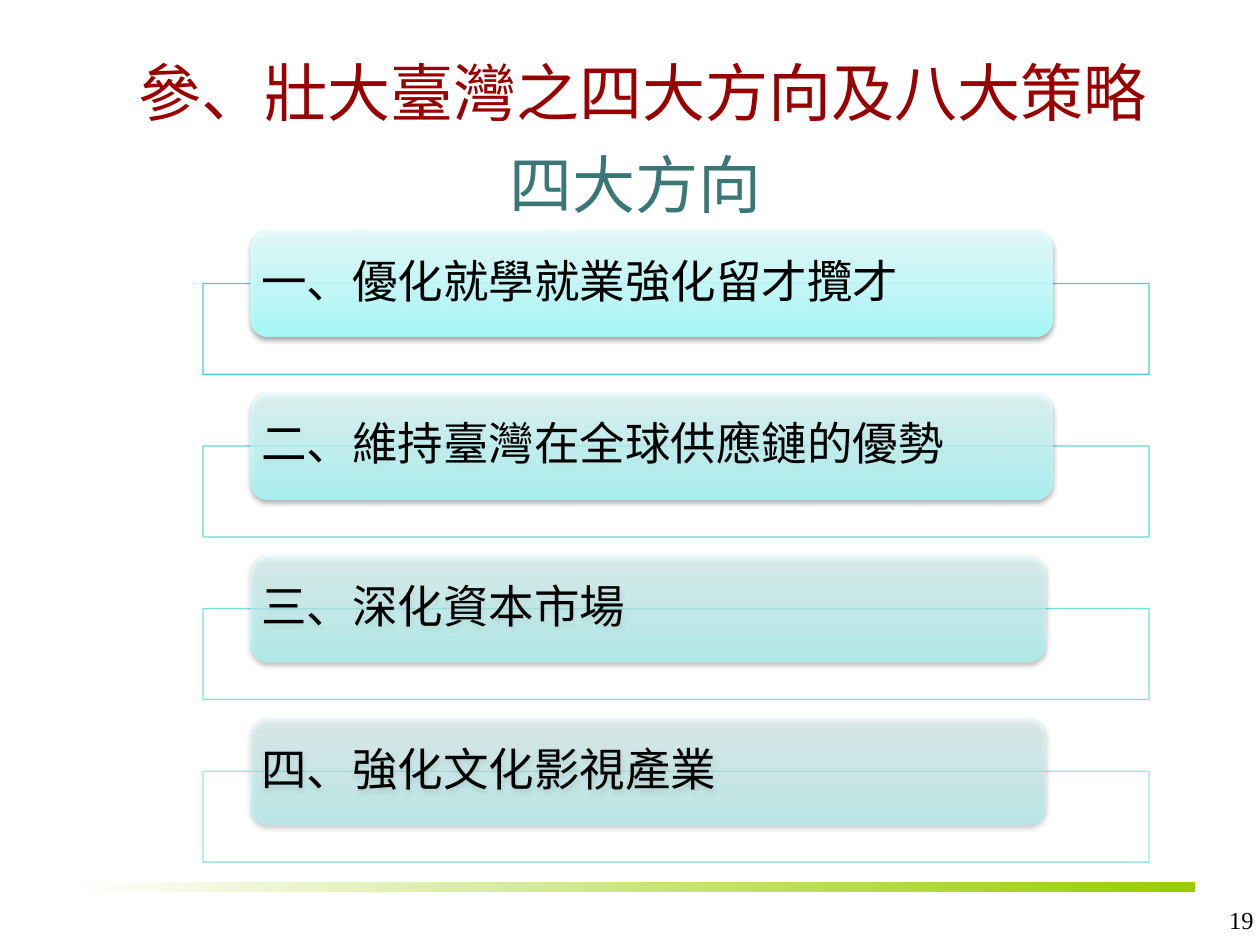
from lxml import etree
from pptx import Presentation
from pptx.dml.color import RGBColor
from pptx.enum import shapes, text
from pptx.oxml import parse_xml
from pptx.oxml.ns import nsdecls, qn
from pptx.util import Pt

CJK, SERIF = "Noto Sans CJK SC", "Times New Roman"
RED = RGBColor(0x99, 0x00, 0x00)
TEAL = RGBColor(0x3C, 0x77, 0x77)
BLACK = RGBColor(0, 0, 0)
WHITE = RGBColor(0xFF, 0xFF, 0xFF)
TURQUOISE = RGBColor(0x33, 0xCC, 0xCC)
GREEN = RGBColor(0x99, 0xCC, 0x00)
PALE_STOPS = [(0, RGBColor(0xA5, 0xFF, 0xFF)), (35, RGBColor(0xBF, 0xFF, 0xFF)),
              (100, RGBColor(0xE7, 0xFF, 0xFF))]
DIRECTIONS = [("一、優化就學就業強化留才攬才", 458, 90),
              ("二、維持臺灣在全球供應鏈的優勢", 458, 77),
              ("三、深化資本市場", 454, 63),
              ("四、強化文化影視產業", 454, 50)]


def put_text(sp, words, size, color, font=CJK, inset=3.6, align=text.PP_ALIGN.LEFT,
             anchor=text.MSO_ANCHOR.TOP, spacing=1.0, wrap=True):
    """Write one formatted paragraph into a shape."""
    tf = sp.text_frame
    frame = {"word_wrap": wrap, "vertical_anchor": anchor, "auto_size": text.MSO_AUTO_SIZE.NONE}
    frame.update({f"margin_{side}": Pt(inset) for side in ("left", "right", "top", "bottom")})
    for name, value in frame.items():
        setattr(tf, name, value)
    p = tf.paragraphs[0]
    p.alignment, p.line_spacing = align, spacing
    r = p.add_run()
    r.text = words
    for name, value in {"size": Pt(size), "name": font, "bold": False}.items():
        setattr(r.font, name, value)
    r.font.color.rgb = color
    etree.SubElement(r.font._element, qn("a:ea")).set("typeface", font)
    return p


def add_box(s, kind, x, y, w, h):
    """Add a preset shape without line or shadow."""
    sp = s.shapes.add_shape(kind, Pt(x), Pt(y), Pt(w), Pt(h))
    sp.shadow.inherit = False
    sp.line.fill.background()
    return sp


def set_alpha(fill, percent):
    """Set the opacity of a solid fill."""
    color = fill._xPr.find(qn("a:solidFill"))[0]
    etree.SubElement(color, qn("a:alpha")).set("val", str(percent * 1000))


def set_gradient(sp, stops, angle, alpha=100):
    """Give a shape a linear gradient, with the angle in clockwise degrees."""
    stop_xml = "".join(
        f'<a:gs pos="{pos * 1000}"><a:srgbClr val="{color}">'
        f'<a:alpha val="{alpha * 1000}"/></a:srgbClr></a:gs>' for pos, color in stops)
    grad = parse_xml(f'<a:gradFill {nsdecls("a")} rotWithShape="1"><a:gsLst>{stop_xml}</a:gsLst>'
                     f'<a:lin ang="{angle * 60000}" scaled="0"/></a:gradFill>')
    sp._element.spPr.find(qn("a:prstGeom")).addnext(grad)


def set_shadow(sp):
    """Give a shape a soft shadow below it."""
    effects = sp._element.spPr.find(qn("a:effectLst"))
    effects.append(parse_xml(
        f'<a:outerShdw {nsdecls("a")} blurRad="{Pt(3)}" dist="{Pt(1.6)}" dir="5400000" '
        f'rotWithShape="0"><a:srgbClr val="{BLACK}"><a:alpha val="38000"/></a:srgbClr>'
        '</a:outerShdw>'))


def add_heading(s, x, y, w):
    """Place the title and the subtitle under it."""
    title = s.shapes.title
    for name, value in {"left": x, "top": y, "width": w, "height": 70}.items():
        setattr(title, name, Pt(value))
    middle = {"align": text.PP_ALIGN.CENTER, "anchor": text.MSO_ANCHOR.MIDDLE}
    p = put_text(title, "參、壯大臺灣之四大方向及八大策略", 36, RED, **middle)
    p._p.get_or_add_pPr().set("indent", str(Pt(14.4)))
    subtitle = s.shapes.add_textbox(Pt(x + 193), Pt(y + 65.6), Pt(340), Pt(44))
    put_text(subtitle, "四大方向", 36, TEAL, **middle)


def add_direction(s, x, y, w, words, label_w, alpha):
    """Place one outlined frame with its rounded label on top."""
    frame = add_box(s, shapes.MSO_SHAPE.RECTANGLE, x, y + 30.2, w, 52)
    frame.fill.solid()
    frame.fill.fore_color.rgb = WHITE
    set_alpha(frame.fill, 90)
    frame.line.color.rgb = TURQUOISE
    frame.line.width = Pt(0.75)
    set_alpha(frame.line.fill, alpha)
    label = add_box(s, shapes.MSO_SHAPE.ROUNDED_RECTANGLE, x + 27.3, y, label_w, 60.5)
    set_gradient(label, PALE_STOPS, 270, alpha)
    set_shadow(label)
    put_text(label, words, 26, BLACK, inset=3, anchor=text.MSO_ANCHOR.MIDDLE, spacing=0.9)


def add_directions(s, x, y, w, pitch):
    """Stack the four directions at an equal pitch."""
    for i, direction in enumerate(DIRECTIONS):
        add_direction(s, x, y + i * pitch, w, *direction)


def add_footer(s, x, y, w):
    """Place the fading rule and the slide number."""
    rule = add_box(s, shapes.MSO_SHAPE.RECTANGLE, x, y, w, 6)
    set_gradient(rule, [(0, WHITE), (100, GREEN)], 0)
    number = s.shapes.add_textbox(Pt(700), Pt(y + 9.4), Pt(20), Pt(22))
    put_text(number, "19", 14, BLACK, SERIF, align=text.PP_ALIGN.RIGHT, wrap=False)


def main():
    """Build and save the slide."""
    prs = Presentation()
    prs.slide_width, prs.slide_height = Pt(720), Pt(540)
    s = prs.slides.add_slide(prs.slide_layouts[5])
    add_footer(s, 41, 504, 642)
    add_heading(s, 0, 17, 720)
    add_directions(s, 116, 131.8, 540.6, 92.9)
    prs.save("out.pptx")


if __name__ == "__main__":
    main()
